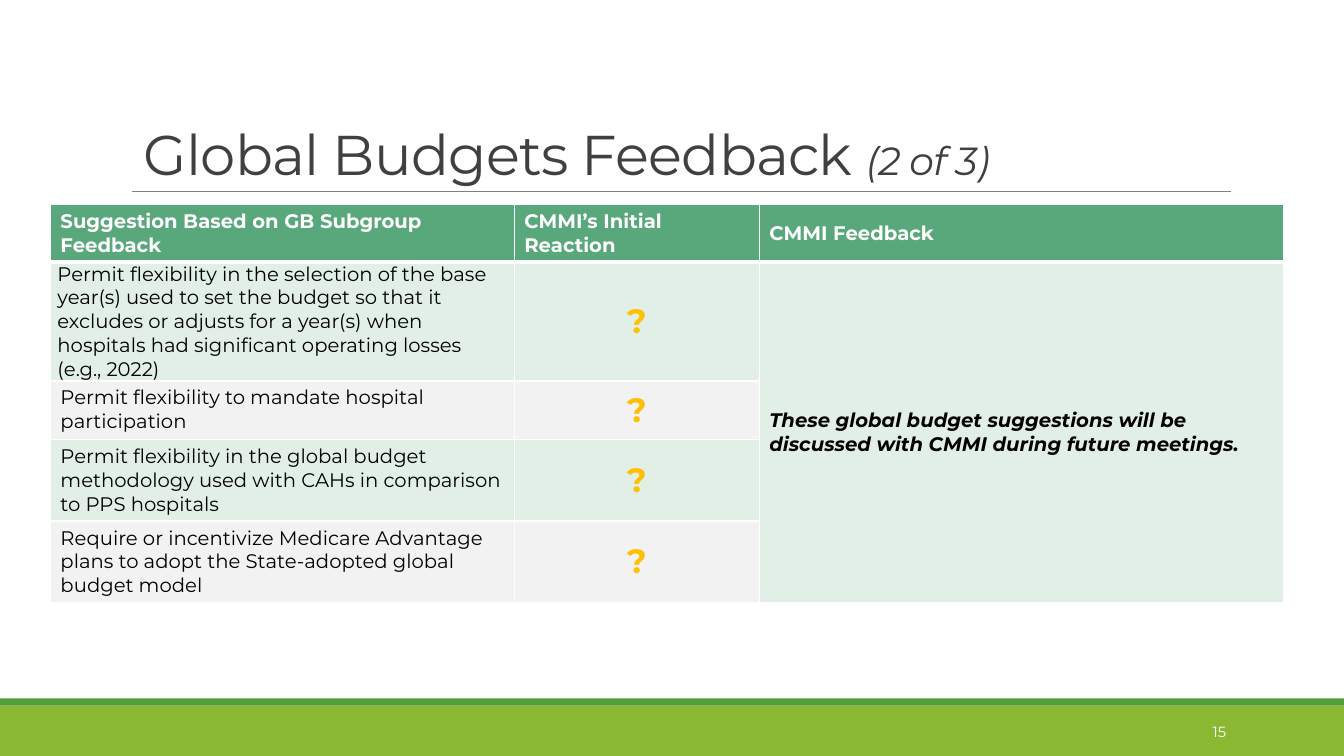
from lxml import etree
from pptx import Presentation
from pptx.dml.color import RGBColor
from pptx.enum.shapes import MSO_CONNECTOR, MSO_SHAPE
from pptx.enum.text import MSO_ANCHOR as Anchor, PP_ALIGN as Align
from pptx.oxml.ns import qn
from pptx.util import Inches, Pt

FONT = "Montserrat"
WHITE = RGBColor(0xFF, 0xFF, 0xFF)
BLACK = RGBColor(0, 0, 0)
TITLE_GRAY = RGBColor(0x40, 0x40, 0x40)
RULE_GRAY = RGBColor(0x80, 0x80, 0x80)
LIME = RGBColor(0x8A, 0xB8, 0x33)
GREEN = RGBColor(0x54, 0x9E, 0x39)
HEADER_GREEN = RGBColor(0x59, 0xA8, 0x7C)
PALE_GREEN = RGBColor(0xE1, 0xEF, 0xE7)
PALE_GRAY = RGBColor(0xF2, 0xF2, 0xF2)
AMBER = RGBColor(0xFF, 0xC0, 0x00)

HEADERS = ["Suggestion Based on GB Subgroup Feedback", "CMMI’s Initial Reaction", "CMMI Feedback"]
SUGGESTIONS = [
    "Permit flexibility in the selection of the base year(s) used to set the budget so that it "
    "excludes or adjusts for a year(s) when hospitals had significant operating losses (e.g., 2022)",
    "Permit flexibility to mandate hospital participation",
    "Permit flexibility in the global budget methodology used with CAHs in comparison to PPS hospitals",
    "Require or incentivize Medicare Advantage plans to adopt the State-adopted global budget model",
]
FEEDBACK = "These global budget suggestions will be discussed with CMMI during future meetings."
COLUMN_WIDTHS = [4.6, 2.43, 5.2]
ROW_HEIGHTS = [0.57, 1.18, 0.58, 0.81, 0.81]


def style_span(span, size, color, bold=False, italic=False):
    span.font.name = FONT
    span.font.size = Pt(size)
    span.font.color.rgb = color
    span.font.bold = bold
    span.font.italic = italic


def add_text_box(slide, box, anchor):
    frame = slide.shapes.add_textbox(*map(Inches, box)).text_frame
    frame.word_wrap = True
    frame.vertical_anchor = anchor
    return frame


def add_title(slide, box):
    left, top, width, height = box
    para = add_text_box(slide, box, Anchor.BOTTOM).paragraphs[0]
    para.line_spacing = 0.85
    for text, size, italic in [("Global Budgets Feedback ", 40, False), ("(2 of 3)", 28, True)]:
        span = para.add_run()
        span.text = text
        style_span(span, size, TITLE_GRAY, italic=italic)
        span.font._element.set("spc", "-50")
    bottom = Inches(top + height)
    rule = slide.shapes.add_connector(
        MSO_CONNECTOR.STRAIGHT, Inches(left - 0.02), bottom, Inches(left + width + 0.02), bottom)
    rule.line.color.rgb = RULE_GRAY
    rule.line.width = Pt(0.5)
    etree.SubElement(rule._element.spPr, qn("a:effectLst"))


def add_footer(slide, box):
    left, top, width, height = box
    stripe = 0.07
    bands = [(top + stripe, height - stripe, LIME), (top, stripe, GREEN)]
    for band_top, band_height, color in bands:
        band = slide.shapes.add_shape(
            MSO_SHAPE.RECTANGLE, *map(Inches, (left, band_top, width, band_height)))
        band.shadow.inherit = False
        band.fill.solid()
        band.fill.fore_color.rgb = color
        band.line.fill.background()
    number_box = (left + 10.83, top + 0.13, 1.43, 0.4)
    para = add_text_box(slide, number_box, Anchor.MIDDLE).paragraphs[0]
    para.text = "15"
    para.alignment = Align.RIGHT
    style_span(para.runs[0], 10.5, WHITE)


def style_cell(cell, fill, bottom_width=1, top_width=1):
    properties = cell._tc.get_or_add_tcPr()
    for side, width in [("L", 1), ("R", 1), ("T", top_width), ("B", bottom_width)]:
        border = etree.SubElement(properties, qn(f"a:ln{side}"), w=str(Pt(width)))
        color = etree.SubElement(etree.SubElement(border, qn("a:solidFill")), qn("a:srgbClr"))
        color.set("val", str(WHITE))
    cell.fill.solid()
    cell.fill.fore_color.rgb = fill


def write_cell(cell, text, size, color, anchor=Anchor.MIDDLE, align=Align.LEFT, **emphasis):
    cell.text_frame.text = text
    cell.vertical_anchor = anchor
    para = cell.text_frame.paragraphs[0]
    para.alignment = align
    style_span(para.runs[0], size, color, **emphasis)


def add_feedback_table(slide, box):
    table = slide.shapes.add_table(
        len(ROW_HEIGHTS), len(COLUMN_WIDTHS), *map(Inches, box)).table
    for column, width in zip(table.columns, COLUMN_WIDTHS):
        column.width = Inches(width)
    for row, height in zip(table.rows, ROW_HEIGHTS):
        row.height = Inches(height)

    for index, header in enumerate(HEADERS):
        cell = table.cell(0, index)
        style_cell(cell, HEADER_GREEN, bottom_width=3)
        write_cell(cell, header, 14, WHITE, bold=True)

    for index, suggestion in enumerate(SUGGESTIONS, 1):
        fill = PALE_GREEN if index % 2 else PALE_GRAY
        for column, color in enumerate([fill, fill, PALE_GREEN]):
            style_cell(table.cell(index, column), color, top_width=3 if index == 1 else 1)
        write_cell(table.cell(index, 0), suggestion, 14, BLACK, anchor=Anchor.TOP)
        write_cell(table.cell(index, 1), "?", 24, AMBER, align=Align.CENTER, bold=True)

    first = table.cell(1, 0)
    first.margin_left = first.margin_right = Inches(0.07)
    first.margin_top = first.margin_bottom = 0
    feedback = table.cell(1, 2)
    feedback.merge(table.cell(len(SUGGESTIONS), 2))
    write_cell(feedback, FEEDBACK, 14, BLACK, bold=True, italic=True)


def main():
    deck = Presentation()
    deck.slide_width = Inches(13.33)
    deck.slide_height = Inches(7.5)
    slide = deck.slides.add_slide(deck.slide_layouts[6])
    add_footer(slide, (0, 6.93, 13.33, 0.57))
    add_title(slide, (1.33, 0.31, 10.86, 1.59))
    add_feedback_table(slide, (0.5, 2.03, sum(COLUMN_WIDTHS), sum(ROW_HEIGHTS)))
    deck.save("out.pptx")


if __name__ == "__main__":
    main()
